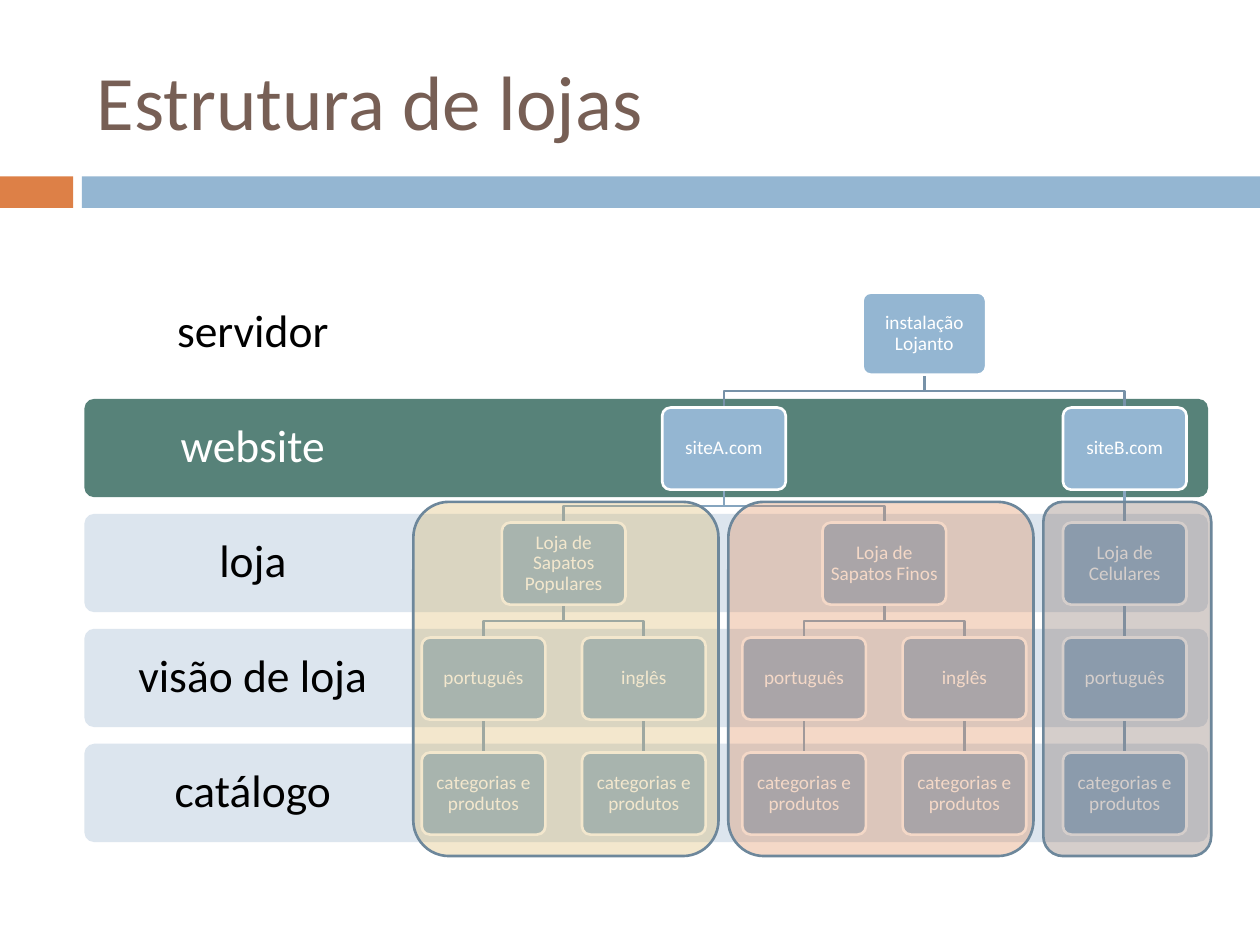
from typing import Any, NamedTuple, Optional

from lxml.etree import SubElement as Sub
from pptx import Presentation
from pptx.dml.color import RGBColor as Rgb
from pptx.enum.shapes import MSO_CONNECTOR as Conn, MSO_SHAPE as Kind
from pptx.enum.text import MSO_ANCHOR as Anchor, MSO_AUTO_SIZE as Auto, PP_ALIGN as Align
from pptx.oxml.ns import qn
from pptx.util import Pt

FONT = "Calibri"
BLUE, WHITE, BLACK = "94B6D2", "FFFFFF", "000000"
BAND_LEFT, BAND_TOP, BAND_W, BAND_H = 48.2, 162.2, 642.2, 56.2
LABEL_W = 192.6
ROW_STEP, COL_STEP, COL_MID = 65.7, 45.8, 276.3
NODE_TOP, NODE_W, NODE_H = 167.2, 70.6, 46.9


class Box(NamedTuple):
    left: float
    top: float
    width: float
    height: float


class Band(NamedTuple):
    text: str
    fill: str = "DCE5EE"
    ink: str = BLACK


class Node(NamedTuple):
    text: str
    row: int
    col: float
    up: Optional[int] = None

    @property
    def mid(self) -> float:
        return COL_MID + COL_STEP * self.col

    @property
    def top(self) -> float:
        return NODE_TOP + ROW_STEP * self.row


class Zone(NamedTuple):
    left: float
    width: float
    fill: str


BARS = [(Box(0, 100.8, 41.8, 18), "DD8047"), (Box(46.8, 100.8, 673.2, 18), BLUE)]
BANDS = [
    Band("servidor", WHITE),
    Band("website", "578279", WHITE),
    Band("loja"),
    Band("visão de loja"),
    Band("catálogo"),
]
GOODS = "categorias e produtos"
NODES = [
    Node("instalação Lojanto", 0, 5.5),
    Node("siteA.com", 1, 3, 0),
    Node("siteB.com", 1, 8, 0),
    Node("Loja de Sapatos Populares", 2, 1, 1),
    Node("Loja de Sapatos Finos", 2, 5, 1),
    Node("Loja de Celulares", 2, 8, 2),
]
VIEWS = [("português", 0, 3), ("inglês", 2, 3), ("português", 4, 4),
         ("inglês", 6, 4), ("português", 8, 5)]
for name, col, shop in VIEWS:
    NODES.append(Node(name, 3, col, shop))
    NODES.append(Node(GOODS, 4, col, len(NODES) - 1))
ZONES = [
    Zone(236.2, 174.4, "D8B25C"),
    Zone(416.2, 174.4, "DD8047"),
    Zone(596.2, 95.9, "775F55"),
]


def paint(part: Any, hue: str) -> None:
    part.rgb = Rgb.from_string(hue)


def apply(part: Any, form: dict[str, Any]) -> None:
    for key, value in form.items():
        setattr(part, key, value)


def place(item: Any, box: Box) -> None:
    apply(item, {key: Pt(value) for key, value in box._asdict().items()})


def stroke(line: Any, hue: str) -> None:
    paint_line = line.fill
    paint_line.solid()
    paint(paint_line.fore_color, hue)
    line.width = Pt(1.5)


def write(item: Any, text: str, size: float, ink: str, inset: float,
          align: Align = Align.CENTER, space: float = 0.9) -> None:
    frame = item.text_frame
    apply(frame, {"text": text, "word_wrap": True, "auto_size": Auto.NONE,
                  "vertical_anchor": Anchor.MIDDLE})
    apply(frame, {f"margin_{side}": Pt(inset) for side in ("left", "top", "right", "bottom")})
    line = frame.paragraphs[0]
    apply(line, {"alignment": align, "line_spacing": space})
    font = line.runs[0].font
    apply(font, {"name": FONT, "size": Pt(size)})
    paint(font.color, ink)


def block(shapes: Any, box: Box, fill: str, curve: Optional[float] = None,
          edge: Optional[str] = None) -> Any:
    kind = Kind.RECTANGLE if curve is None else Kind.ROUNDED_RECTANGLE
    item = shapes.add_shape(kind, *map(Pt, box))
    item.shadow.inherit = False
    if curve is not None:
        item.adjustments[0] = curve
    item.fill.solid()
    paint(item.fill.fore_color, fill)
    if edge:
        stroke(item.line, edge)
    else:
        item.line.fill.background()
    return item


def draw_band(shapes: Any, band: Band, row: int) -> None:
    box = Box(BAND_LEFT, BAND_TOP + ROW_STEP * row, BAND_W, BAND_H)
    block(shapes, box, band.fill, 0.1)
    label = shapes.add_textbox(*map(Pt, box._replace(width=LABEL_W)))
    write(label, band.text, 26, band.ink, 14.4)


def draw_link(shapes: Any, top: Node, low: Node) -> None:
    start, end = top.top + NODE_H, low.top
    if top.mid == low.mid:
        link = shapes.add_connector(Conn.STRAIGHT, *map(Pt, (top.mid, start, low.mid, end)))
        Sub(link._element.spPr, qn("a:effectLst"))
    else:
        half = (start + end) / 2
        pen = shapes.build_freeform(Pt(top.mid), Pt(start))
        turns = [(top.mid, half), (low.mid, half), (low.mid, end)]
        pen.add_line_segments([(Pt(x), Pt(y)) for x, y in turns], close=False)
        link = pen.convert_to_shape()
        link.shadow.inherit = False
        link.fill.background()
    stroke(link.line, "7792A8" if low.row == 1 else "86A5BF")


def draw_node(shapes: Any, node: Node) -> None:
    box = Box(node.mid - NODE_W / 2, node.top, NODE_W, NODE_H)
    write(block(shapes, box, BLUE, 0.1, WHITE), node.text, 11, WHITE, 3.3)


def draw_zone(shapes: Any, zone: Zone) -> None:
    item = block(shapes, Box(zone.left, 286.8, zone.width, 202.4), zone.fill, 0.117, "6D879B")
    tint = item._element.spPr.find(qn("a:solidFill"))[0]
    Sub(tint, qn("a:alpha"), val="30000")


def main() -> None:
    deck = Presentation()
    apply(deck, {"slide_width": Pt(720), "slide_height": Pt(540)})
    slide = deck.slides.add_slide(deck.slide_layouts[5])
    shapes = slide.shapes
    place(shapes.title, Box(48.2, 18, 642.2, 77.8))
    write(shapes.title, "Estrutura de lojas", 44, "775F55", 7.2, Align.LEFT, 1.0)
    for box, fill in BARS:
        block(shapes, box, fill)
    for row, band in enumerate(BANDS):
        draw_band(shapes, band, row)
    for node in NODES:
        if node.up is not None:
            draw_link(shapes, NODES[node.up], node)
    for node in NODES:
        draw_node(shapes, node)
    for zone in ZONES:
        draw_zone(shapes, zone)
    deck.save("out.pptx")


if __name__ == "__main__":
    main()
